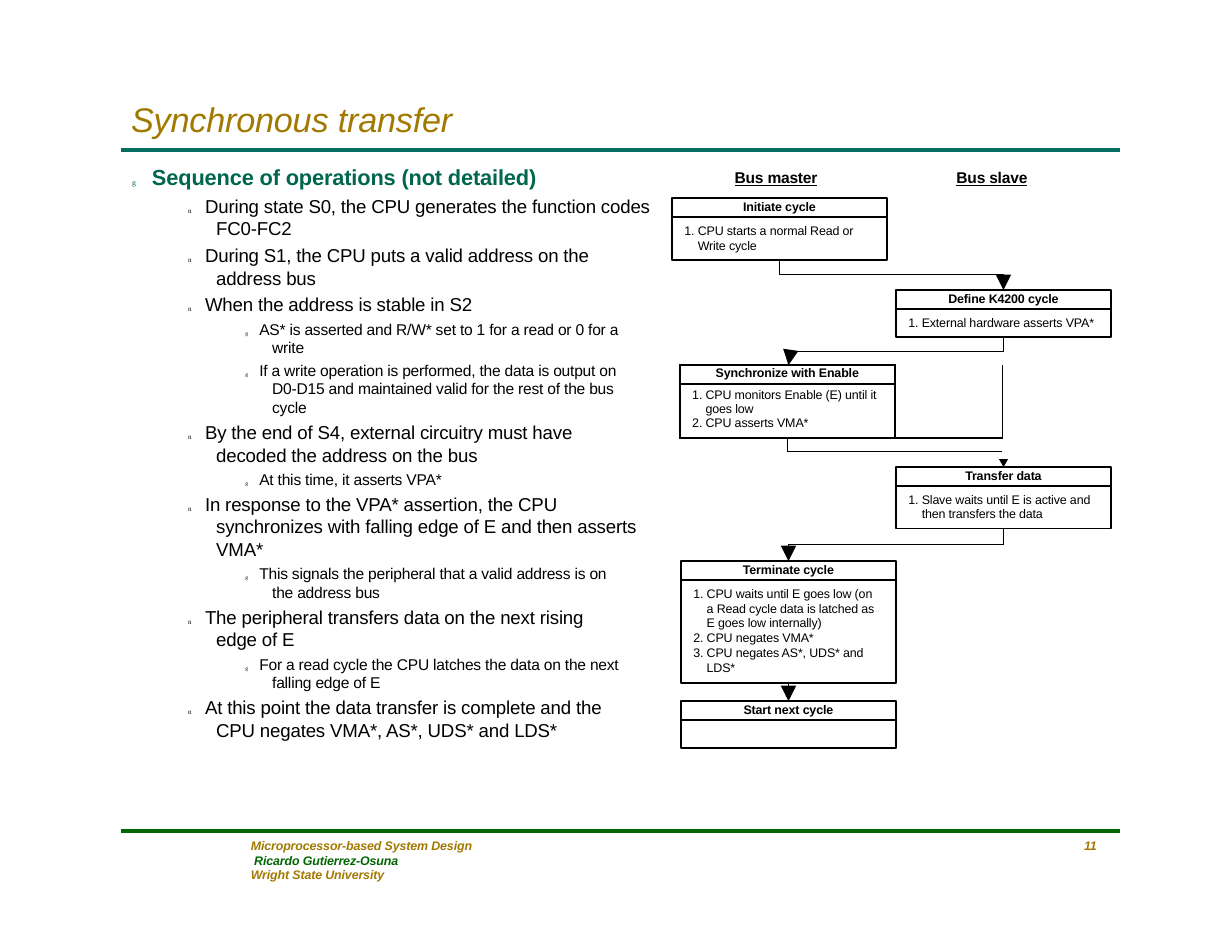
from copy import deepcopy

from lxml import etree
from pptx import Presentation
from pptx.dml.color import RGBColor
from pptx.enum import shapes, text
from pptx.oxml.ns import qn
from pptx.util import Inches, Pt

BLACK, GOLD, GREEN, TEAL, HEADING = "000000", "A27900", "006600", "016D60", "00664D"
LINE = Pt(0.96)


def rgb(value):
    return RGBColor.from_string(value)


def write(owner, lines, size, hue=BLACK, bold=False, italic=False, top=0.01,
          align=text.PP_ALIGN.LEFT, numbered=False):
    """Fill a shape or a table cell with evenly formatted paragraphs."""
    frame = owner.text_frame
    box = owner if hasattr(owner, "is_spanned") else frame
    box.margin_left = box.margin_right = box.margin_bottom = 0
    box.margin_top = Inches(top)
    box.vertical_anchor = text.MSO_ANCHOR.TOP
    if box is frame:
        frame.word_wrap = True
    frame.text = "\n".join(lines)
    for paragraph in frame.paragraphs:
        paragraph.alignment = align
        if numbered:
            properties = paragraph._p.get_or_add_pPr()
            properties.set("marL", str(Inches(0.23)))
            properties.set("indent", str(Inches(-0.12)))
            etree.SubElement(properties, qn("a:buFont"), typeface="+mj-lt")
            etree.SubElement(properties, qn("a:buAutoNum"), type="arabicPeriod")
        for run in paragraph.runs:
            run.font.name, run.font.size = "Arial", Pt(size)
            run.font.bold, run.font.italic = bold, italic
            run.font.color.rgb = rgb(hue)
            run._r.rPr.set("spc", "-10")
        for line_break in paragraph._p.findall(qn("a:br")):
            line_break.append(deepcopy(paragraph.runs[0]._r.rPr))


deck = Presentation()
deck.slide_width, deck.slide_height = Inches(11), Inches(8.5)
slide = deck.slides.add_slide(deck.slide_layouts[5])

# Title and the two rules
title = slide.shapes.title
title.left, title.top, title.width, title.height = (
    Inches(1.17), Inches(0.87), Inches(8.8), Inches(0.4))
write(title, ["Synchronous transfer"], 22, GOLD, italic=True)
for y, hue in ((1.34, TEAL), (7.42, GREEN)):
    rule = slide.shapes.add_connector(
        shapes.MSO_CONNECTOR.STRAIGHT, Inches(1.08), Inches(y), Inches(10), Inches(y))
    rule.line.color.rgb, rule.line.width = rgb(hue), Pt(2.88)

# Heading and outline: (level, text)
outline = [
    (1, "During state S0, the CPU generates the function codes FC0-FC2"),
    (1, "During S1, the CPU puts a valid address on the address bus"),
    (1, "When the address is stable in S2"),
    (2, "AS* is asserted and R/W* set to 1 for a read or 0 for a\vwrite"),
    (2, "If a write operation is performed, the data is output on\v"
        "D0-D15 and maintained valid for the rest of the bus\vcycle"),
    (1, "By the end of S4, external circuitry must have\vdecoded the address on the bus"),
    (2, "At this time, it asserts VPA*"),
    (1, "In response to the VPA* assertion, the CPU\v"
        "synchronizes with falling edge of E and then asserts\vVMA*"),
    (2, "This signals the peripheral that a valid address is on\vthe address bus"),
    (1, "The peripheral transfers data on the next rising\vedge of E"),
    (2, "For a read cycle the CPU latches the data on the next\vfalling edge of E"),
    (1, "At this point the data transfer is complete and the\v"
        "CPU negates VMA*, AS*, UDS* and LDS*"),
]
heading = slide.shapes.add_textbox(Inches(1.17), Inches(1.45), Inches(4.2), Inches(0.26))
write(heading, ["Sequence of operations (not detailed)"], 14, HEADING, bold=True)
operations = slide.shapes.add_textbox(Inches(1.67), Inches(1.73), Inches(4.15), Inches(4.89))
write(operations, [line for level, line in outline], 12)

# Per level: marker, marker size, marker spacing, text size, margin, indent, space before
levels = [("g ", 5, 450, 14, 0.01, 0, 0),
          ("n ", 4.5, 370, 12, 0.26, -0.25, 2.8),
          ("g ", 3.5, 320, 10, 0.76, -0.24, 2.5)]
entries = [(0, heading.text_frame.paragraphs[0])]
entries += [(level, paragraph) for (level, line), paragraph
            in zip(outline, operations.text_frame.paragraphs)]
for position, (level, paragraph) in enumerate(entries):
    glyph, glyph_size, spacing, size, margin, indent, before = levels[level]
    for properties in paragraph._p.iter(qn("a:rPr")):
        properties.set("sz", str(size * 100))
    paragraph._p.pPr.set("marL", str(Inches(margin)))
    paragraph._p.pPr.set("indent", str(Inches(indent)))
    if position > 1:
        paragraph.space_before = Pt(before)
    first = paragraph.runs[0]
    marker = paragraph.add_run()
    marker.text = glyph
    marker.font.name, marker.font.size = "Times New Roman", Pt(glyph_size)
    marker.font.color.rgb = rgb(BLACK if level else HEADING)
    marker._r.rPr.set("spc", str(spacing))
    first._r.addprevious(marker._r)

# Flow chart column headings
for x, role in ((6.56, "Bus master"), (8.54, "Bus slave")):
    column = slide.shapes.add_textbox(Inches(x), Inches(1.49), Inches(0.8), Inches(0.2))
    write(column, [role], 10, bold=True)
    column.text_frame.paragraphs[0].runs[0].font.underline = True

# Flow chart steps: left, top, body height, name, actions
STEP_WIDTH, NAME_HEIGHT = 1.92, 0.17
steps = [
    (6, 1.77, 0.38, "Initiate cycle", ["CPU starts a normal Read or\vWrite cycle"]),
    (8, 2.59, 0.25, "Define K4200 cycle", ["External hardware asserts VPA*"]),
    (8, 4.17, 0.38, "Transfer data",
     ["Slave waits until E is active and\vthen transfers the data"]),
    (6.08, 5.01, 0.92, "Terminate cycle",
     ["CPU waits until E goes low (on\va Read cycle data is latched as\vE goes low internally)",
      "CPU negates VMA*", "CPU negates AS*, UDS* and\vLDS*"]),
    (6.08, 6.26, 0.25, "Start next cycle", []),
]
names, bodies = [], []
for left, top, body_height, name, actions in steps:
    for parts, y, height in ((names, top, NAME_HEIGHT),
                             (bodies, top + NAME_HEIGHT, body_height)):
        part = slide.shapes.add_shape(
            shapes.MSO_SHAPE.RECTANGLE, Inches(left), Inches(y),
            Inches(STEP_WIDTH), Inches(height))
        part.shadow.inherit = False
        part.fill.background()
        part.line.color.rgb, part.line.width = rgb(BLACK), LINE
        parts.append(part)
    write(names[-1], [name], 8, bold=True, align=text.PP_ALIGN.CENTER)
    if actions:
        write(bodies[-1], actions, 8, top=0.05, numbered=True)

# Synchronize step, whose lower rows carry the line towards the slave
frame = slide.shapes.add_table(3, 3, Inches(6.07), Inches(3.26), Inches(2.88), Inches(0.77))
sync = frame.table
sync.first_row = sync.horz_banding = False
sync._tbl.tblPr.find(qn("a:tableStyleId")).text = "{2D5ABB26-0587-4C30-8999-92F81FD0307C}"
for column in sync.columns:
    column.width = Inches(0.96)
for row, height in zip(sync.rows, (0.17, 0.48, 0.12)):
    row.height = Inches(height)
for start, end in (((0, 0), (0, 1)), ((0, 2), (1, 2)), ((1, 0), (1, 1)), ((2, 1), (2, 2))):
    sync.cell(*start).merge(sync.cell(*end))
write(sync.cell(0, 0), ["Synchronize with Enable"], 8, bold=True, align=text.PP_ALIGN.CENTER)
write(sync.cell(1, 0), ["CPU monitors Enable (E) until it\vgoes low", "CPU asserts VMA*"],
      8, top=0.04, numbered=True)
borders = [["LRTB", "RTB", "LB"], ["LRTB", "RTB", "LB"], ["TR", "LTB", "TB"]]
for r, row in enumerate(borders):
    for c, sides in enumerate(row):
        cell = sync.cell(r, c)
        if not cell.text_frame.text:
            write(cell, [""], 1, top=0)
            etree.SubElement(cell.text_frame.paragraphs[0]._p, qn("a:endParaRPr"), sz="100")
        properties = cell._tc.get_or_add_tcPr()
        for side in "LRTB":
            if side in sides:
                edge = etree.SubElement(properties, qn("a:ln" + side), w=str(Pt(1)))
                fill = etree.SubElement(edge, qn("a:solidFill"))
                etree.SubElement(fill, qn("a:srgbClr"), val=BLACK)
        cell.fill.background()

# Bent arrows: start x, start y, turning height, end x, end y
arrows = []
for x1, y1, turn, x2, y2 in ((6.96, 2.32, 2.45, 8.96, 2.59),
                             (8.96, 3.01, 3.14, 7.04, 3.26),
                             (8.96, 4.72, 4.86, 7.04, 5.01)):
    route = slide.shapes.build_freeform(Inches(x1), Inches(y1))
    route.add_line_segments([(Inches(x), Inches(y)) for x, y in
                             ((x1, turn), (x2, turn), (x2, y2))], close=False)
    bend = route.convert_to_shape()
    bend.shadow.inherit = False
    bend.fill.background()
    arrows.append(bend)

# Straight arrow to the next cycle
restart = slide.shapes.add_connector(
    shapes.MSO_CONNECTOR.STRAIGHT, Inches(7.04), Inches(6.1), Inches(7.04), Inches(6.26))
restart.begin_connect(bodies[3], 2)
restart.end_connect(names[4], 0)
arrows.append(restart)
for arrow in arrows:
    arrow.line.color.rgb, arrow.line.width = rgb(BLACK), LINE
    etree.SubElement(arrow.line._get_or_add_ln(), qn("a:tailEnd"),
                     type="triangle", w="lg", len="lg")

# Arrowhead that enters the transfer step
entry = slide.shapes.add_shape(shapes.MSO_SHAPE.FLOWCHART_MERGE, Inches(8.92), Inches(4.1),
                               Inches(0.08), Inches(0.07))
entry.shadow.inherit = False
entry.fill.solid()
entry.fill.fore_color.rgb = rgb(BLACK)
entry.line.fill.background()

# Footer
course = slide.shapes.add_textbox(Inches(2.24), Inches(7.48), Inches(2.3), Inches(0.42))
write(course, ["Microprocessor-based System Design", "Ricardo Gutierrez-Osuna",
               "Wright State University"], 8, GOLD, bold=True, italic=True, top=0)
author = course.text_frame.paragraphs[1]
author.runs[0].font.color.rgb = rgb(GREEN)
author._p.pPr.set("marL", str(Inches(0.03)))
number = slide.shapes.add_textbox(Inches(9.68), Inches(7.48), Inches(0.18), Inches(0.15))
write(number, ["11"], 8, GOLD, bold=True, italic=True, top=0)

# Connectors without shadow
for shape in slide.shapes:
    if shape.shape_type == shapes.MSO_SHAPE_TYPE.LINE:
        etree.SubElement(shape._element.spPr, qn("a:effectLst"))

deck.save("out.pptx")
